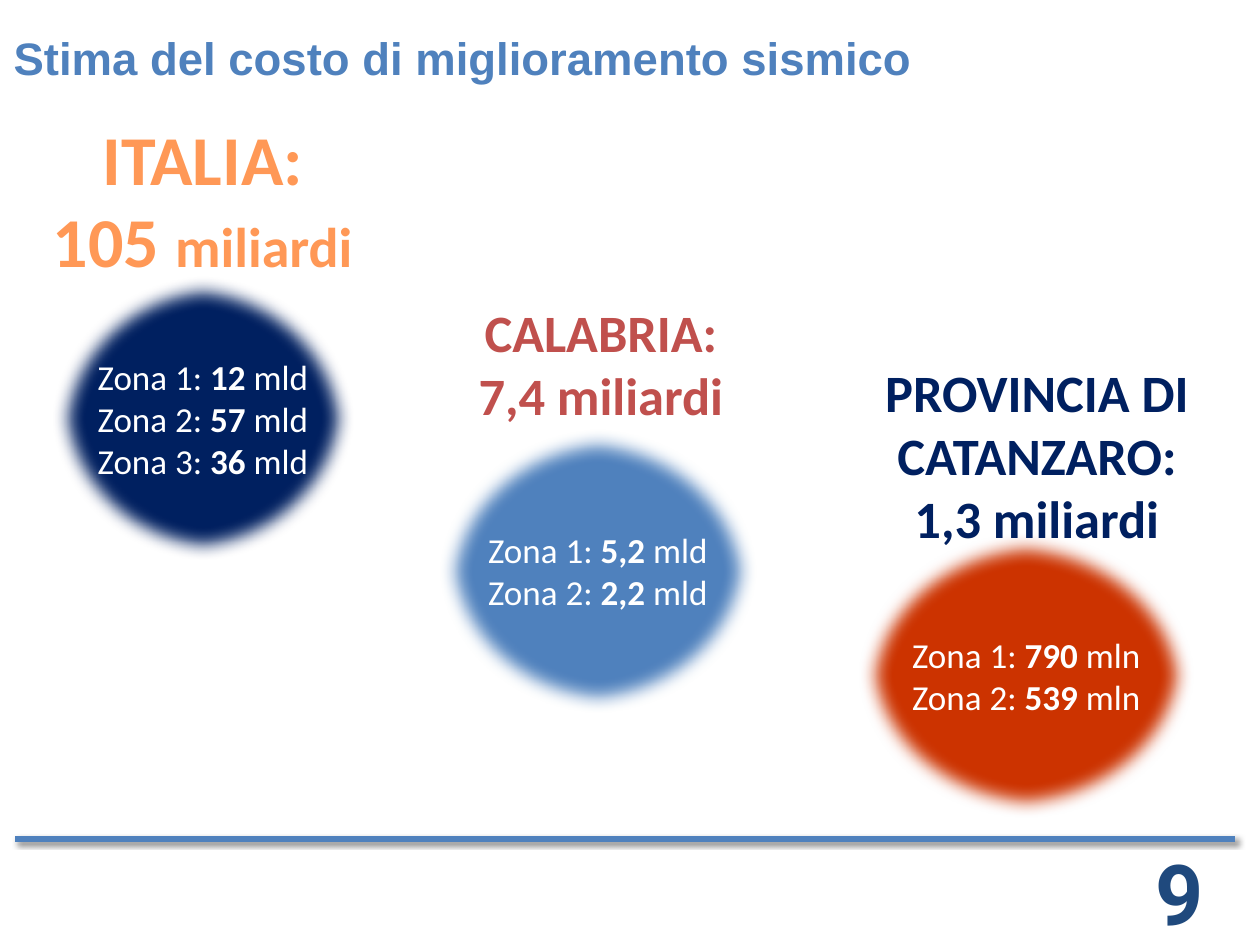
from lxml import etree
from pptx import Presentation
from pptx import util as u
from pptx.dml.color import RGBColor
from pptx.enum import shapes, text
from pptx.oxml import ns

BLUE = RGBColor(0x4F, 0x81, 0xBD)
NAVY = RGBColor(0x00, 0x20, 0x60)
ORANGE = RGBColor(0xFF, 0x98, 0x56)
RED = RGBColor(0xC0, 0x50, 0x4D)
RUST = RGBColor(0xCC, 0x33, 0x00)
DARK_BLUE = RGBColor(0x1F, 0x49, 0x7D)
WHITE = RGBColor(0xFF, 0xFF, 0xFF)

TITLE = "Stima del costo di miglioramento sismico"
PAGE_NUMBER = "9"
BUBBLE_HEIGHT = 2.28
HEADING_WIDTH = 3.78

# A heading line is a list of (words, size) spans.
AREAS = [
    {"heading": [[("ITALIA:", 40)], [("105 ", 40), ("miliardi", 32)]],
     "heading_at": (-0.28, 0.88), "heading_height": 1.42,
     "heading_color": ORANGE, "line_spacing": u.Pt(47),
     "bubble_at": (0.4, 2.18), "bubble_width": 2.42, "fill": NAVY,
     "unit": "mld", "zones": ["12", "57", "36"]},
    {"heading": [[("CALABRIA:", 30)], [("7,4 miliardi", 30)]],
     "heading_at": (2.88, 2.33), "heading_height": 1.11,
     "heading_color": RED, "line_spacing": None,
     "bubble_at": (3.47, 3.39), "bubble_width": 2.55, "fill": BLUE,
     "unit": "mld", "zones": ["5,2", "2,2"]},
    {"heading": [[("PROVINCIA DI CATANZARO:", 30)], [("1,3 miliardi", 30)]],
     "heading_at": (6.34, 2.81), "heading_height": 1.62,
     "heading_color": NAVY, "line_spacing": None,
     "bubble_at": (6.81, 4.22), "bubble_width": 2.67, "fill": RUST,
     "unit": "mln", "zones": ["790", "539"]},
]


def inches(*values):
    return [u.Inches(value) for value in values]


def add_effect(shape, tag, **attributes):
    """Give the shape one effect and return the effect's element."""
    effects = etree.SubElement(shape._element.spPr, ns.qn("a:effectLst"))
    return etree.SubElement(effects, ns.qn(tag), attributes)


def write(frame, lines, color, font="Calibri", align=text.PP_ALIGN.CENTER, spacing=None):
    """Fill a frame with lines of (words, size, bold) spans."""
    frame.word_wrap = True
    for index, spans in enumerate(lines):
        para = frame.add_paragraph() if index else frame.paragraphs[0]
        para.alignment = align
        para.line_spacing = spacing
        for words, size, bold in spans:
            span = para.add_run()
            span.text = words
            span.font.color.rgb = color
            for name, value in {"name": font, "size": u.Pt(size), "bold": bold}.items():
                setattr(span.font, name, value)


def add_label(page, place, lines, color, anchor=text.MSO_ANCHOR.TOP, **style):
    box = page.shapes.add_textbox(*inches(*place))
    box.text_frame.vertical_anchor = anchor
    write(box.text_frame, lines, color, **style)


def add_bubble(page, area):
    bubble = page.shapes.add_shape(
        shapes.MSO_SHAPE.OVAL,
        *inches(*area["bubble_at"], area["bubble_width"], BUBBLE_HEIGHT))
    bubble.fill.solid()
    bubble.fill.fore_color.rgb = area["fill"]
    bubble.line.fill.background()
    add_effect(bubble, "a:softEdge", rad=str(u.Pt(10)))
    frame = bubble.text_frame
    frame.margin_left = frame.margin_right = 0
    frame.vertical_anchor = text.MSO_ANCHOR.MIDDLE
    lines = [[(f"Zona {number}: ", 20, False), (f"{cost} ", 20, True), (area["unit"], 20, False)]
             for number, cost in enumerate(area["zones"], 1)]
    write(frame, lines, WHITE)


def add_footer_rule(page):
    rule = page.shapes.add_connector(
        shapes.MSO_CONNECTOR.STRAIGHT, *inches(0.12, 6.66, 9.8, 6.66))
    rule.line.color.rgb = BLUE
    rule.line.width = u.Pt(3.5)
    shadow = add_effect(rule, "a:outerShdw", blurRad=str(u.Pt(3)), dist=str(u.Pt(2)),
                        dir="2700000", algn="tl", rotWithShape="0")
    black = etree.SubElement(shadow, ns.qn("a:srgbClr"), val="000000")
    etree.SubElement(black, ns.qn("a:alpha"), val="60000")


def main():
    deck = Presentation()
    deck.slide_width, deck.slide_height = inches(10, 7.5)
    page = deck.slides.add_slide(deck.slide_layouts[6])
    add_footer_rule(page)
    add_label(page, (8.72, 6.66, 1.28, 0.87), [[(PAGE_NUMBER, 48, True)]], DARK_BLUE,
              anchor=text.MSO_ANCHOR.BOTTOM, font="Roboto")
    for area in AREAS:
        add_bubble(page, area)
        heading = [[(words, size, True) for words, size in line] for line in area["heading"]]
        add_label(page, (*area["heading_at"], HEADING_WIDTH, area["heading_height"]),
                  heading, area["heading_color"], spacing=area["line_spacing"])
    add_label(page, (0.01, 0, 9.98, 0.91), [[(TITLE, 26, True)]], BLUE,
              anchor=text.MSO_ANCHOR.MIDDLE, font="Arial", align=text.PP_ALIGN.LEFT)
    deck.save("out.pptx")


if __name__ == "__main__":
    main()
